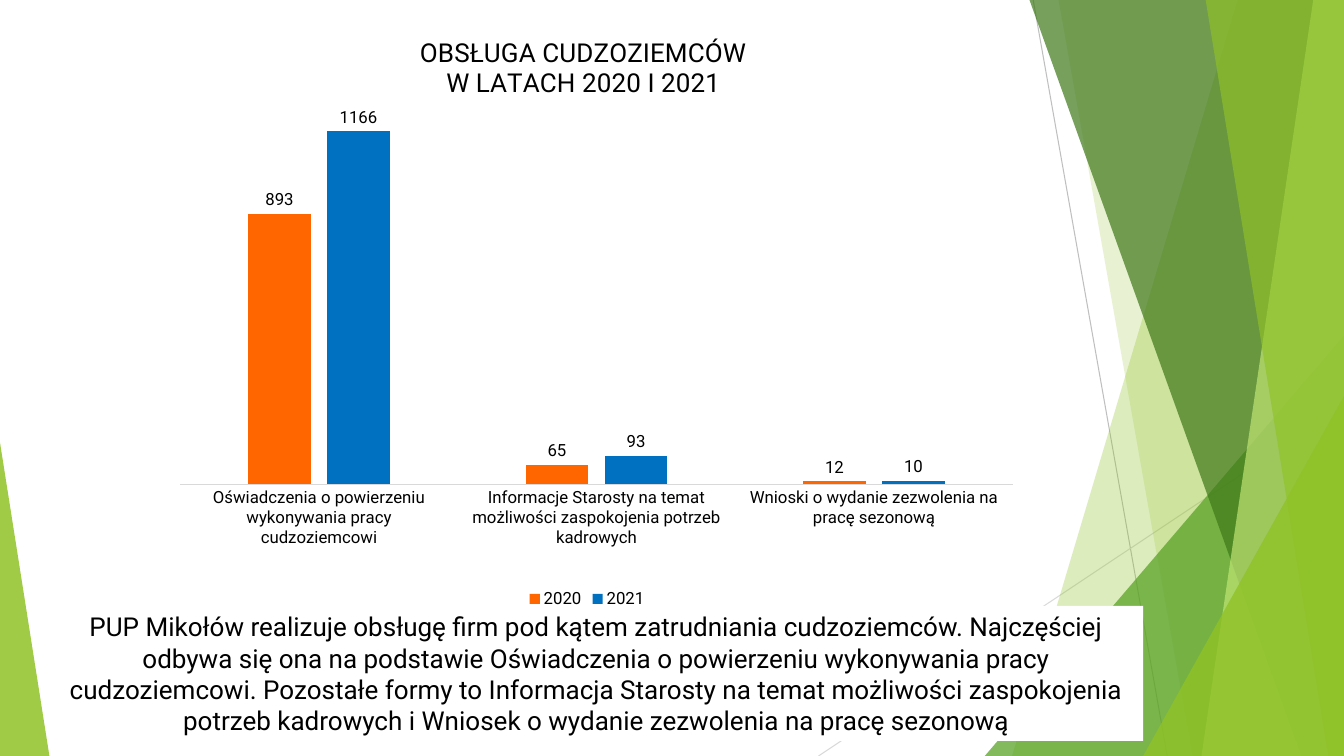
from dataclasses import dataclass

from lxml.etree import SubElement
from pptx import Presentation
from pptx.chart.chart import Chart
from pptx.chart.data import CategoryChartData
from pptx.dml.color import RGBColor
from pptx.enum.chart import XL_CHART_TYPE, XL_LABEL_POSITION, XL_LEGEND_POSITION, XL_TICK_MARK
from pptx.enum.shapes import MSO_CONNECTOR, MSO_SHAPE
from pptx.enum.text import MSO_ANCHOR, PP_ALIGN
from pptx.oxml import parse_xml
from pptx.oxml.ns import nsdecls, qn
from pptx.slide import Slide
from pptx.text.text import Font
from pptx.util import Pt

WIDTH, HEIGHT, TOP = 960, 540, -0.72


@dataclass(frozen=True)
class Theme:
    font: str = "Roboto"
    text: str = "000000"
    paper: str = "FFFFFF"
    axis: str = "D9D9D9"
    title_size: float = 18.6
    body_size: float = 18.6
    label_size: float = 12


@dataclass(frozen=True)
class Ray:
    start: tuple[float, float]
    end: tuple[float, float]
    color: str


@dataclass(frozen=True)
class Band:
    """A facet that runs from its slanted left edge to the right slide edge."""
    top_x: float
    bottom_x: float
    color: str
    opacity: int


@dataclass(frozen=True)
class Corner:
    """A right triangle on the bottom edge; apex 0 is left, 1 is right."""
    left: float
    top: float
    width: float
    apex: int
    color: str
    opacity: int


@dataclass(frozen=True)
class Year:
    name: str
    values: tuple[int, ...]
    color: str
    last_label: str


THEME = Theme()
DECORATION = (
    Ray((738, 0), (833.76, HEIGHT), "BFBFBF"),
    Ray((WIDTH, 290.16), (584.64, HEIGHT), "D9D9D9"),
    Band(884.16, 722.88, "90C226", 30),
    Band(756, 851.76, "90C226", 20),
    Corner(703.44, 239.76, 256.56, 1, "54A021", 72),
    Band(735.12, 929.52, "3F7819", 70),
    Band(938.16, 858.24, "C0E474", 70),
    Band(861.12, 948.96, "90C226", 65),
    Corner(816.48, 282.96, 143.52, 1, "90C226", 80),
    Corner(0, 316.08, 35.28, 0, "90C226", 85),
)
CATEGORIES = (
    "Oświadczenia o powierzeniu wykonywania pracy cudzoziemcowi",
    "Informacje Starosty na temat możliwości zaspokojenia potrzeb kadrowych",
    "Wnioski o wydanie zezwolenia na pracę sezonową",
)
YEARS = (
    Year("2020", (893, 65, 10), "FF6600", "12"),
    Year("2021", (1166, 93, 12), "0070C0", "10"),
)
TITLE = "OBSŁUGA CUDZOZIEMCÓW\nW LATACH 2020 I 2021"
SUMMARY = (
    "PUP Mikołów realizuje obsługę firm pod kątem zatrudniania cudzoziemców. "
    "Najczęściej odbywa się ona na podstawie Oświadczenia o powierzeniu wykonywania pracy "
    "cudzoziemcowi. Pozostałe formy to Informacja Starosty na temat możliwości zaspokojenia "
    "potrzeb kadrowych i Wniosek o wydanie zezwolenia na pracę sezonową"
)


def style_font(font: Font, size: float) -> None:
    font.name, font.size, font.bold = THEME.font, Pt(size), False
    font.color.rgb = RGBColor.from_string(THEME.text)


def paint(shape, color: str, opacity: int = 100) -> None:
    shape.shadow.inherit = False
    shape.line.fill.background()
    shape.fill.solid()
    shape.fill.fore_color.rgb = RGBColor.from_string(color)
    if opacity < 100:
        tint = shape.element.spPr.find(qn("a:solidFill"))[0]
        SubElement(tint, qn("a:alpha"), val=str(opacity * 1000))


def draw_ray(page: Slide, ray: Ray) -> None:
    line = page.shapes.add_connector(
        MSO_CONNECTOR.STRAIGHT, *(Pt(value) for value in ray.start + ray.end))
    line.line.color.rgb = RGBColor.from_string(ray.color)
    line.line.width = Pt(0.75)
    SubElement(line.element.spPr, qn("a:effectLst"))


def draw_band(page: Slide, band: Band) -> None:
    outline = page.shapes.build_freeform(Pt(band.top_x), Pt(TOP))
    corners = ((WIDTH, TOP), (WIDTH, HEIGHT), (band.bottom_x, HEIGHT))
    outline.add_line_segments([(Pt(x), Pt(y)) for x, y in corners], close=True)
    paint(outline.convert_to_shape(), band.color, band.opacity)


def draw_corner(page: Slide, corner: Corner) -> None:
    triangle = page.shapes.add_shape(
        MSO_SHAPE.ISOSCELES_TRIANGLE, Pt(corner.left), Pt(corner.top),
        Pt(corner.width), Pt(HEIGHT - corner.top))
    triangle.adjustments[0] = corner.apex
    paint(triangle, corner.color, corner.opacity)


def place_part(chart: Chart, tag: str, index: int, inner: bool = False, **place: float) -> None:
    """Fix a chart part at fractions of the chart area."""
    part = chart.element.find(f".//{qn(tag)}")
    for old in part.findall(qn("c:layout")):
        part.remove(old)
    layout = parse_xml(f"<c:layout {nsdecls('c')}><c:manualLayout/></c:layout>")
    settings = {"layoutTarget": "inner"} if inner else {}
    settings |= {"xMode": "edge", "yMode": "edge"} | place
    for name, value in settings.items():
        SubElement(layout[0], qn(f"c:{name}"), val=str(value))
    part.insert(index, layout)


def draw_chart(page: Slide) -> None:
    data = CategoryChartData()
    data.categories = CATEGORIES
    for year in YEARS:
        data.add_series(year.name, year.values)
    chart = page.shapes.add_chart(
        XL_CHART_TYPE.COLUMN_CLUSTERED, Pt(99.36), Pt(10.8), Pt(640.08), Pt(426.96), data).chart
    style_font(chart.font, THEME.label_size)

    chart.chart_title.text_frame.text = TITLE
    for para in chart.chart_title.text_frame.paragraphs:
        para.alignment = PP_ALIGN.CENTER
        style_font(para.runs[0].font, THEME.title_size)
    place_part(chart, "c:title", 1, x=0.31, y=0.03)
    place_part(chart, "c:plotArea", 0, inner=True, x=0.046, y=0.076, w=0.929, h=0.709)

    chart.has_legend = True
    chart.legend.position = XL_LEGEND_POSITION.BOTTOM
    chart.legend.include_in_layout = False
    style_font(chart.legend.font, THEME.label_size)

    chart.value_axis.visible = False
    chart.value_axis.has_major_gridlines = False
    chart.value_axis.minimum_scale, chart.value_axis.maximum_scale = 0, 1400
    axis = chart.category_axis
    axis.major_tick_mark = axis.minor_tick_mark = XL_TICK_MARK.NONE
    axis.format.line.color.rgb = RGBColor.from_string(THEME.axis)
    axis.format.line.width = Pt(0.75)
    style_font(axis.tick_labels.font, THEME.label_size)

    plot = chart.plots[0]
    plot.gap_width, plot.overlap, plot.vary_by_categories = 219, -27, False
    for series, year in zip(plot.series, YEARS):
        series.format.fill.solid()
        series.format.fill.fore_color.rgb = RGBColor.from_string(year.color)
        labels = series.data_labels
        labels.show_value = True
        labels.position = XL_LABEL_POSITION.OUTSIDE_END
        style_font(labels.font, THEME.label_size)
        last = series.points[len(CATEGORIES) - 1].data_label
        last.text_frame.text = year.last_label
        style_font(last.text_frame.paragraphs[0].runs[0].font, THEME.label_size)
        last.position = XL_LABEL_POSITION.OUTSIDE_END


def draw_summary(page: Slide) -> None:
    box = page.shapes.add_shape(
        MSO_SHAPE.RECTANGLE, Pt(35.28), Pt(432.72), Pt(781.2), Pt(96.48))
    paint(box, THEME.paper)
    frame = box.text_frame
    frame.text = SUMMARY
    frame.word_wrap = True
    frame.vertical_anchor = MSO_ANCHOR.MIDDLE
    para = frame.paragraphs[0]
    para.alignment = PP_ALIGN.CENTER
    style_font(para.runs[0].font, THEME.body_size)


def main() -> None:
    deck = Presentation()
    deck.slide_width, deck.slide_height = Pt(WIDTH), Pt(HEIGHT)
    page = deck.slides.add_slide(deck.slide_layouts.get_by_name("Blank"))
    painters = {Ray: draw_ray, Band: draw_band, Corner: draw_corner}
    for part in DECORATION:
        painters[type(part)](page, part)
    draw_chart(page)
    draw_summary(page)
    deck.save("out.pptx")


if __name__ == "__main__":
    main()
